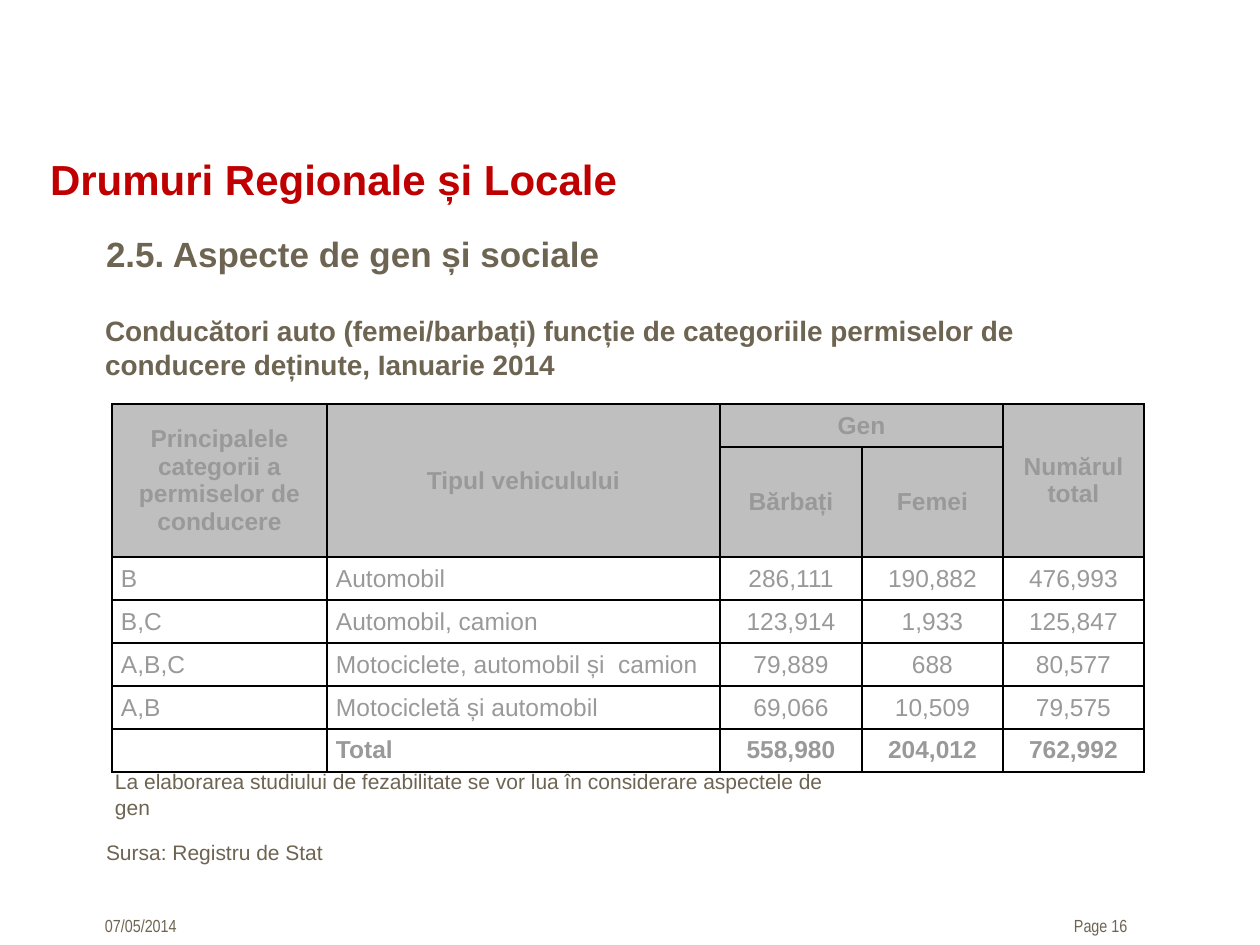
from lxml import etree
from pptx import Presentation
from pptx.dml.color import RGBColor
from pptx.enum.text import MSO_ANCHOR, MSO_AUTO_SIZE, PP_ALIGN
from pptx.oxml.ns import qn
from pptx.util import Pt

BROWN = RGBColor(0x6E, 0x64, 0x52)
RED = RGBColor(0xC0, 0x00, 0x00)
GRAY = RGBColor(0x99, 0x99, 0x99)
SILVER = RGBColor(0xBF, 0xBF, 0xBF)
LEFT, CENTER = PP_ALIGN.LEFT, PP_ALIGN.CENTER
TOP, MIDDLE = MSO_ANCHOR.TOP, MSO_ANCHOR.MIDDLE
FIXED = MSO_AUTO_SIZE.NONE
PX = 914400 / 126


def put(frame, text, size=12, color=BROWN, bold=False, font="Arial",
        align=LEFT, before=0, after=0):
    para = frame.paragraphs[0]
    para.text = text
    para.alignment = align
    para.space_before, para.space_after = Pt(before), Pt(after)
    para.line_spacing = 1.0
    face = para.font
    face.name, face.size, face.bold = font, Pt(size), bold
    face.color.rgb = color


def place(shape, box, inset=8):
    """Move a text shape to a pixel box and return its text frame."""
    shape.left, shape.top, shape.width, shape.height = [
        int(n * PX) for n in box]
    frame = shape.text_frame
    frame.word_wrap = True
    frame.auto_size = FIXED
    frame.vertical_anchor = TOP
    frame.margin_left = frame.margin_right = int(12 * PX)
    frame.margin_top, frame.margin_bottom = int(inset * PX), 0
    return frame


prs = Presentation()
prs.slide_width, prs.slide_height = int(1260 * PX), int(945 * PX)
slide = prs.slides.add_slide(prs.slide_layouts[1])
shapes = slide.shapes

# Title and lead text
put(place(shapes.title, (94, 222, 1071, 86), 10),
    "2.5. Aspecte de gen și sociale", size=20, bold=True)

body = place(slide.placeholders[1], (93, 306, 1071, 586))
props = body.paragraphs[0]._p.get_or_add_pPr()
props.set("marL", "0")
props.set("indent", "0")
etree.SubElement(props, qn("a:buNone"))
put(body, "Conducători auto (femei/barbați) funcție de categoriile "
    "permiselor de conducere deținute, Ianuarie 2014", size=16, bold=True)

# Heading, footer and notes under the table
NARROW = dict(size=10, font="Arial Narrow")
LABELS = [
    ("Drumuri Regionale și Locale", (38, 146, 1139, 89),
     dict(size=24, color=RED, bold=True)),
    ("07/05/2014", (93, 907, 179, 34), NARROW),
    ("Page 16", (1062, 907, 127, 34), NARROW),
    ("Sursa: Registru de Stat", (94, 832, 747, 74), {}),
    ("La elaborarea studiului de fezabilitate se vor lua în considerare "
     "aspectele de gen", (103, 761, 747, 74), {}),
]
for text, box, style in LABELS:
    put(place(shapes.add_textbox(0, 0, 0, 0), box), text, **style)

# Table of drivers by licence and gender
COLS = [215, 393, 142, 141, 141]
ROWS = [43, 110] + [43] * 5
DATA = [
    ["Principalele categorii a permiselor de conducere",
     "Tipul vehiculului", "Gen", "", "Numărul total"],
    ["", "", "Bărbați", "Femei", ""],
    ["B", "Automobil", "286,111", "190,882", "476,993"],
    ["B,C", "Automobil, camion", "123,914", "1,933", "125,847"],
    ["A,B,C", "Motociclete, automobil și  camion", "79,889", "688", "80,577"],
    ["A,B", "Motocicletă și automobil", "69,066", "10,509", "79,575"],
    ["", "Total", "558,980", "204,012", "762,992"],
]
SPANS = [(0, 0, 1, 0), (0, 1, 1, 1), (0, 2, 0, 3), (0, 4, 1, 4)]

table = shapes.add_table(
    len(ROWS), len(COLS), int(112 * PX), int(404 * PX),
    int(sum(COLS) * PX), int(sum(ROWS) * PX)).table
table.first_row = table.horz_banding = False
for col, width in zip(table.columns, COLS):
    col.width = int(width * PX)
for row, height in zip(table.rows, ROWS):
    row.height = int(height * PX)

for r, line in enumerate(DATA):
    head = r < 2
    for c, text in enumerate(line):
        cell = table.cell(r, c)
        cell.margin_left = cell.margin_right = int(9 * PX)
        cell.margin_top = cell.margin_bottom = 0
        cell.vertical_anchor = MIDDLE
        put(cell.text_frame, text, size=14, color=GRAY,
            bold=head or r == len(DATA) - 1,
            align=CENTER if head or c > 1 else LEFT,
            before=0 if head else 2, after=6)
        edges = cell._tc.get_or_add_tcPr()
        for side in ("lnL", "lnR", "lnT", "lnB"):
            edge = etree.SubElement(edges, qn("a:" + side), w=str(Pt(1)))
            fill = etree.SubElement(edge, qn("a:solidFill"))
            etree.SubElement(fill, qn("a:srgbClr"), val="000000")
        if head:
            cell.fill.solid()
            cell.fill.fore_color.rgb = SILVER
        else:
            cell.fill.background()

for top, left, bottom, right in SPANS:
    table.cell(top, left).merge(table.cell(bottom, right))

prs.save("out.pptx")
